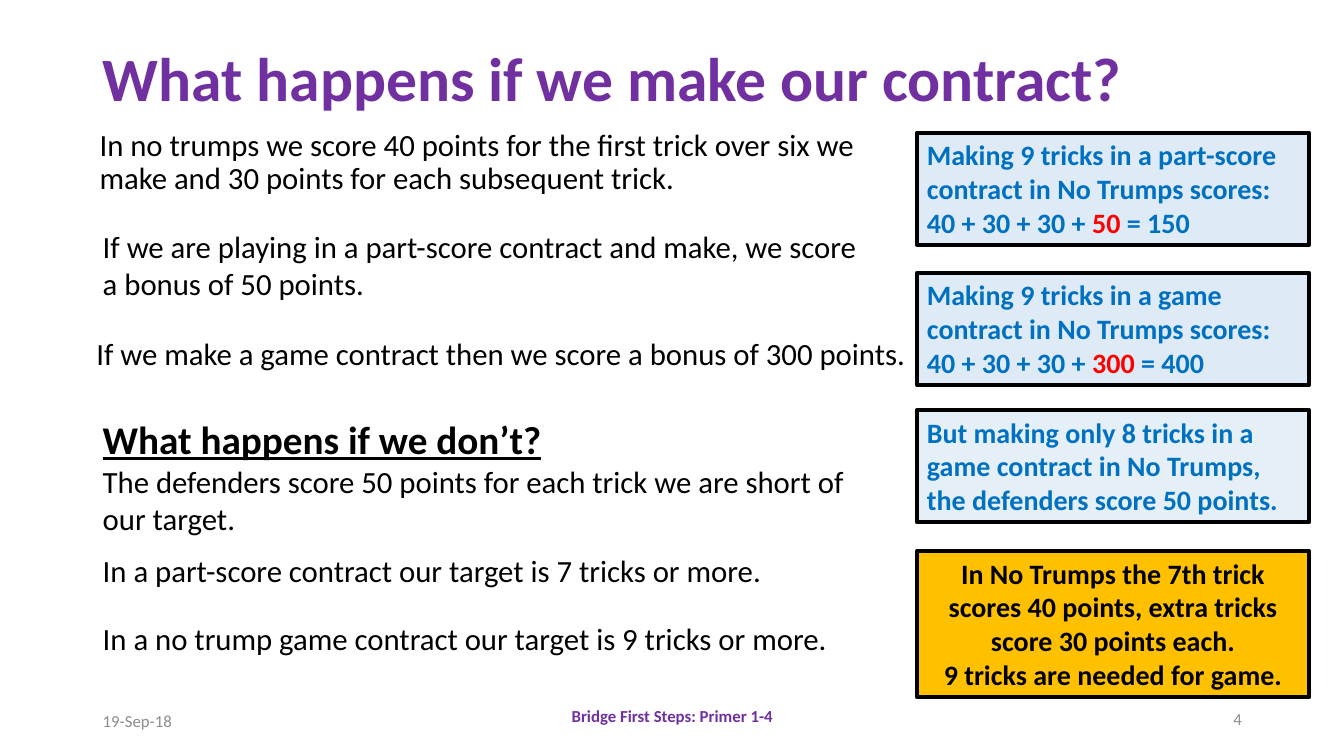
"""Build the slide on scoring a no trump contract in bridge."""
import pptx
import pptx.dml.color
import pptx.enum.shapes
import pptx.enum.text
import pptx.oxml
import pptx.oxml.ns
import pptx.util
from pptx.util import Cm

ALIGN = pptx.enum.text.PP_ALIGN
ANCHOR = pptx.enum.text.MSO_ANCHOR
BLACK, PURPLE, GREY = "000000", "7030A0", "8C8C8C"
BLUE, RED, PALE, GOLD = "0070C0", "FF0000", "DEEBF7", "FFC000"
LEFT = 2.34
CARD_LEFT, CARD_WIDTH, CARD_HEIGHT = 23.11, 9.88, 2.82


def rgb(value):
    """Turn a hex string into a colour."""
    return pptx.dml.color.RGBColor.from_string(value)


def write(sp, *paragraphs, size=22, color=BLACK, bold=False, underline=False,
          align=ALIGN.LEFT, anchor=ANCHOR.TOP, spacing=None):
    """Write paragraphs, each a string or a list of (text, colour) runs."""
    tf = sp.text_frame
    tf.word_wrap = True
    tf.vertical_anchor = anchor
    for i, content in enumerate(paragraphs):
        p = tf.paragraphs[0] if i == 0 else tf.add_paragraph()
        p.alignment = align
        p.line_spacing = spacing
        runs = [(content, color)] if isinstance(content, str) else content
        for text, run_color in runs:
            r = p.add_run()
            r.text = text
            r.font.name = "Calibri"
            r.font.size = pptx.util.Pt(size)
            r.font.bold = bold
            r.font.underline = underline
            r.font.color.rgb = rgb(run_color)


def add_text(s, x, y, w, h, text, **fmt):
    """Add a text box measured in centimetres."""
    sp = s.shapes.add_textbox(Cm(x), Cm(y), Cm(w), Cm(h))
    write(sp, text, **fmt)


def add_card(s, y, *paragraphs, h=CARD_HEIGHT, fill=PALE, opacity=100,
             color=BLUE, align=ALIGN.LEFT):
    """Add a framed card to the right-hand column."""
    sp = s.shapes.add_shape(pptx.enum.shapes.MSO_SHAPE.RECTANGLE,
                            Cm(CARD_LEFT), Cm(y), Cm(CARD_WIDTH), Cm(h))
    sp.shadow.inherit = False
    sp.fill.solid()
    sp.fill.fore_color.rgb = rgb(fill)
    if opacity < 100:
        clr = sp.fill._xPr.find(".//" + pptx.oxml.ns.qn("a:srgbClr"))
        alpha = pptx.oxml.parse_xml(
            f'<a:alpha {pptx.oxml.ns.nsdecls("a")} val="{opacity * 1000}"/>')
        clr.append(alpha)
    sp.line.color.rgb = rgb(BLACK)
    sp.line.width = pptx.util.Pt(3)
    write(sp, *paragraphs, size=20, color=color, bold=True, align=align)


def score(bonus, total):
    """Return the runs of a score sum with its bonus in red."""
    return [("40 + 30 + 30 + ", BLUE), (bonus, RED), (f" = {total}", BLUE)]


def add_footer(s, x, y, w, text, **fmt):
    """Add one part of the footer."""
    add_text(s, x, y, w, 1.02, text, size=12, anchor=ANCHOR.MIDDLE, **fmt)


def main():
    """Build and save the slide."""
    prs = pptx.Presentation()
    prs.slide_width, prs.slide_height = Cm(33.87), Cm(19.05)
    s = prs.slides.add_slide(prs.slide_layouts[6])

    add_text(s, LEFT, 1.02, 29.21, 2.08, "What happens if we make our contract?",
             size=44, color=PURPLE, bold=True, anchor=ANCHOR.MIDDLE, spacing=0.9)
    add_text(s, 2.26, 3.15, 19.61, 2.31,
             "In no trumps we score 40 points for the first trick over six we "
             "make and 30 points for each subsequent trick.", spacing=0.9)
    add_text(s, LEFT, 5.61, 19.61, 2.13,
             "If we are playing in a part-score contract and make, we score "
             "a bonus of 50 points.")
    add_text(s, 2.18, 8.31, 21.46, 1.19,
             "If we make a game contract then we score a bonus of 300 points.")
    add_text(s, LEFT, 10.34, 18.57, 1.45, "What happens if we don’t?",
             size=28, bold=True, underline=True)
    add_text(s, LEFT, 11.53, 19.61, 2.13,
             "The defenders score 50 points for each trick we are short of "
             "our target.")
    add_text(s, LEFT, 13.79, 18.34, 1.19,
             "In a part-score contract our target is 7 tricks or more.")
    add_text(s, LEFT, 15.49, 18.9, 1.19,
             "In a no trump game contract our target is 9 tricks or more.")

    add_card(s, 3.35, "Making 9 tricks in a part-score contract in No Trumps scores:",
             score("50", "150"))
    add_card(s, 6.88, "Making 9 tricks in a game contract in No Trumps scores:",
             score("300", "400"))
    add_card(s, 10.34, "But making only 8 tricks in a game contract in No Trumps, "
             "the defenders score 50 points.", opacity=79)
    add_card(s, 13.89, "In No Trumps the 7th trick scores 40 points, extra tricks "
             "score 30 points each.", "9 tricks are needed for game.",
             h=3.68, fill=GOLD, color=BLACK, align=ALIGN.CENTER)

    add_footer(s, LEFT, 17.65, 7.62, "19-Sep-18", color=GREY)
    add_footer(s, 11.23, 17.53, 11.43, "Bridge First Steps: Primer 1-4",
               color=PURPLE, bold=True, align=ALIGN.CENTER)
    add_footer(s, 23.93, 17.6, 7.62, "4", color=GREY, align=ALIGN.RIGHT)
    prs.save("out.pptx")


if __name__ == "__main__":
    main()
